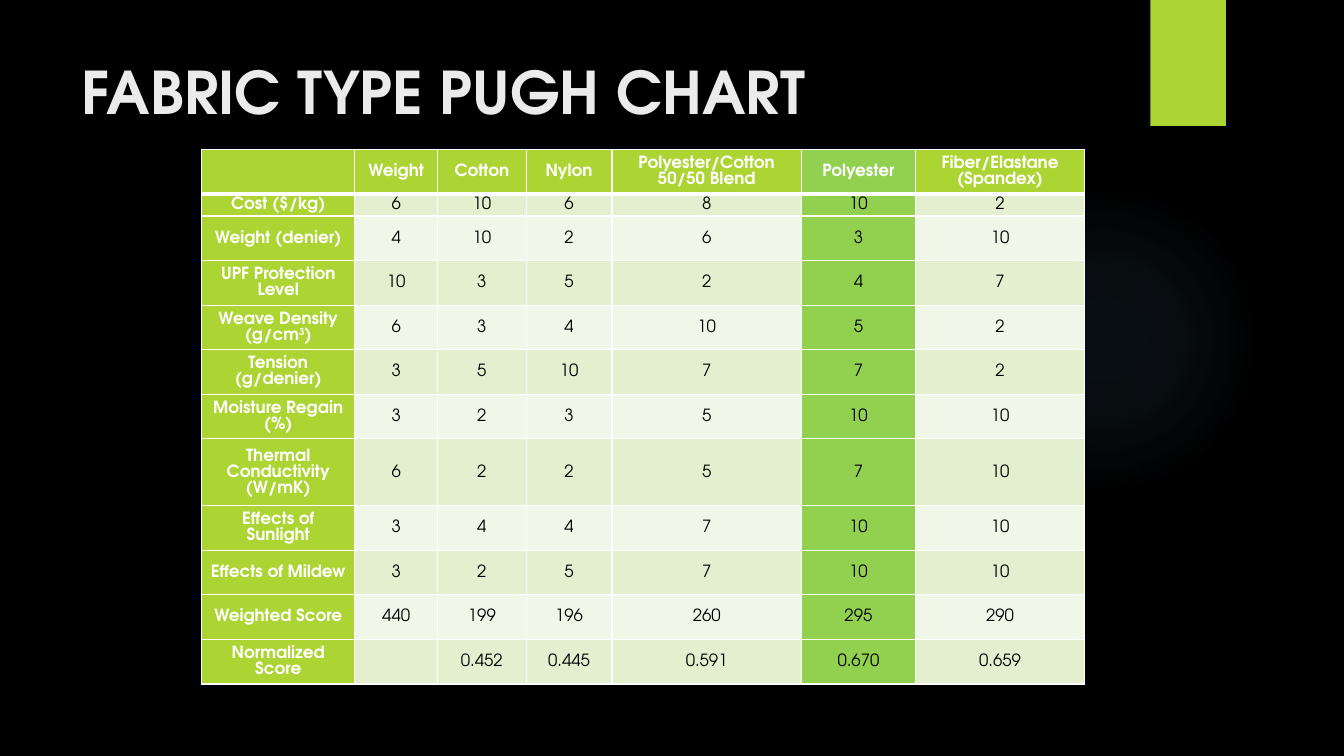
import pptx
import pptx.dml.color
import pptx.enum.shapes
import pptx.enum.text
import pptx.oxml
import pptx.oxml.ns
import pptx.util

FONT = "TeX Gyre Adventor"
LIME, GREEN, WHITE = "ACD433", "92D050", "FFFFFF"
BANDS = ["F1F7E8", "E3EFCE"]
NAMESPACE = pptx.oxml.ns.nsdecls("a")
Inches = pptx.util.Inches
Pt = pptx.util.Pt


def color(value):
    return pptx.dml.color.RGBColor.from_string(value)


def style(para, size, value, bold):
    para.font.name = FONT
    para.font.size = Pt(size)
    para.font.bold = bold
    para.font.color.rgb = color(value)


deck = pptx.Presentation()
deck.slide_width, deck.slide_height = Inches(13.33), Inches(7.5)
page = deck.slides.add_slide(deck.slide_layouts[6])
page.background.fill.solid()
page.background.fill.fore_color.rgb = color("000000")

# Background glow and corner tab
shapes = pptx.enum.shapes.MSO_SHAPE
glow = page.shapes.add_shape(shapes.OVAL, Inches(9.41), Inches(1.83), Inches(3.08), Inches(3.08))
tab = page.shapes.add_shape(shapes.RECTANGLE, Inches(11.41), 0, Inches(0.75), Inches(1.25))
for shape in (glow, tab):
    shape.shadow.inherit = False
    shape.line.fill.background()
tab.fill.solid()
tab.fill.fore_color.rgb = color(LIME)
stops = "".join(
    f'<a:gs pos="{share}000"><a:srgbClr val="7AC4F0"><a:alpha val="{alpha}000"/></a:srgbClr></a:gs>'
    for share, alpha in [(0, 7), (36, 6), (69, 0)])
glow._element.spPr.find(pptx.oxml.ns.qn("a:prstGeom")).addnext(pptx.oxml.parse_xml(
    f'<a:gradFill {NAMESPACE}><a:gsLst>{stops}</a:gsLst><a:path path="circle">'
    '<a:fillToRect l="50000" t="50000" r="50000" b="50000"/></a:path></a:gradFill>'))

# Title
title = page.shapes.add_textbox(Inches(0.71), Inches(0.5), Inches(10.29), Inches(1.53))
title.text_frame.word_wrap = True
title.text_frame.text = "FABRIC TYPE PUGH CHART"
style(title.text_frame.paragraphs[0], 42, "EBEBEB", True)

# Pugh chart; text between ^ marks is superscript
rows = [
    ["", "Weight", "Cotton", "Nylon", "Polyester/Cotton 50/50 Blend", "Polyester",
     "Fiber/Elastane (Spandex)"],
    ["Cost ($/kg)", 6, 10, 6, 8, 10, 2],
    ["Weight (denier)", 4, 10, 2, 6, 3, 10],
    ["UPF Protection Level", 10, 3, 5, 2, 4, 7],
    ["Weave Density (g/cm^3^)", 6, 3, 4, 10, 5, 2],
    ["Tension (g/denier)", 3, 5, 10, 7, 7, 2],
    ["Moisture Regain (%)", 3, 2, 3, 5, 10, 10],
    ["Thermal Conductivity (W/mK)", 6, 2, 2, 5, 7, 10],
    ["Effects of Sunlight", 3, 4, 4, 7, 10, 10],
    ["Effects of Mildew", 3, 2, 5, 7, 10, 10],
    ["Weighted Score", 440, 199, 196, 260, 295, 290],
    ["Normalized Score", "", "0.452", "0.445", "0.591", "0.670", "0.659"],
]
column_widths = [1.52, 0.82, 0.88, 0.85, 1.88, 1.13, 1.68]
row_lines = [2, 1, 2, 2, 2, 2, 2, 3, 2, 2, 2, 2]
chart_height = 5.31
best_column = rows[0].index("Polyester")

chart = page.shapes.add_table(len(rows), len(column_widths), Inches(2), Inches(1.48),
                              Inches(sum(column_widths)), Inches(chart_height)).table
for column, width in zip(chart.columns, column_widths):
    column.width = Inches(width)
for row, lines in zip(chart.rows, row_lines):
    row.height = Inches(chart_height * lines / sum(row_lines))

for r, values in enumerate(rows):
    for c, value in enumerate(values):
        cell = chart.cell(r, c)
        heading = r == 0 or c == 0
        cell.margin_left = cell.margin_right = Inches(0.07)
        cell.margin_top = cell.margin_bottom = 0
        cell.vertical_anchor = pptx.enum.text.MSO_ANCHOR.MIDDLE

        for side in "LRTB":
            thick = (r, side) in [(0, "B"), (1, "T")]
            cell._tc.get_or_add_tcPr().append(pptx.oxml.parse_xml(
                f'<a:ln{side} {NAMESPACE} w="{Pt(3 if thick else 1)}"><a:solidFill>'
                f'<a:srgbClr val="{WHITE}"/></a:solidFill></a:ln{side}>'))
        cell.fill.solid()
        cell.fill.fore_color.rgb = color(
            GREEN if c == best_column else LIME if heading else BANDS[r % 2])

        para = cell.text_frame.paragraphs[0]
        para.alignment = pptx.enum.text.PP_ALIGN.CENTER
        para.line_spacing = Pt(11.4)
        style(para, 12, WHITE if heading else "000000", heading)
        if value == "":
            continue
        for index, piece in enumerate(str(value).split("^")):
            span = para.add_run()
            span.text = piece
            if index % 2:
                span._r.get_or_add_rPr().set("baseline", "30000")

deck.save("out.pptx")
